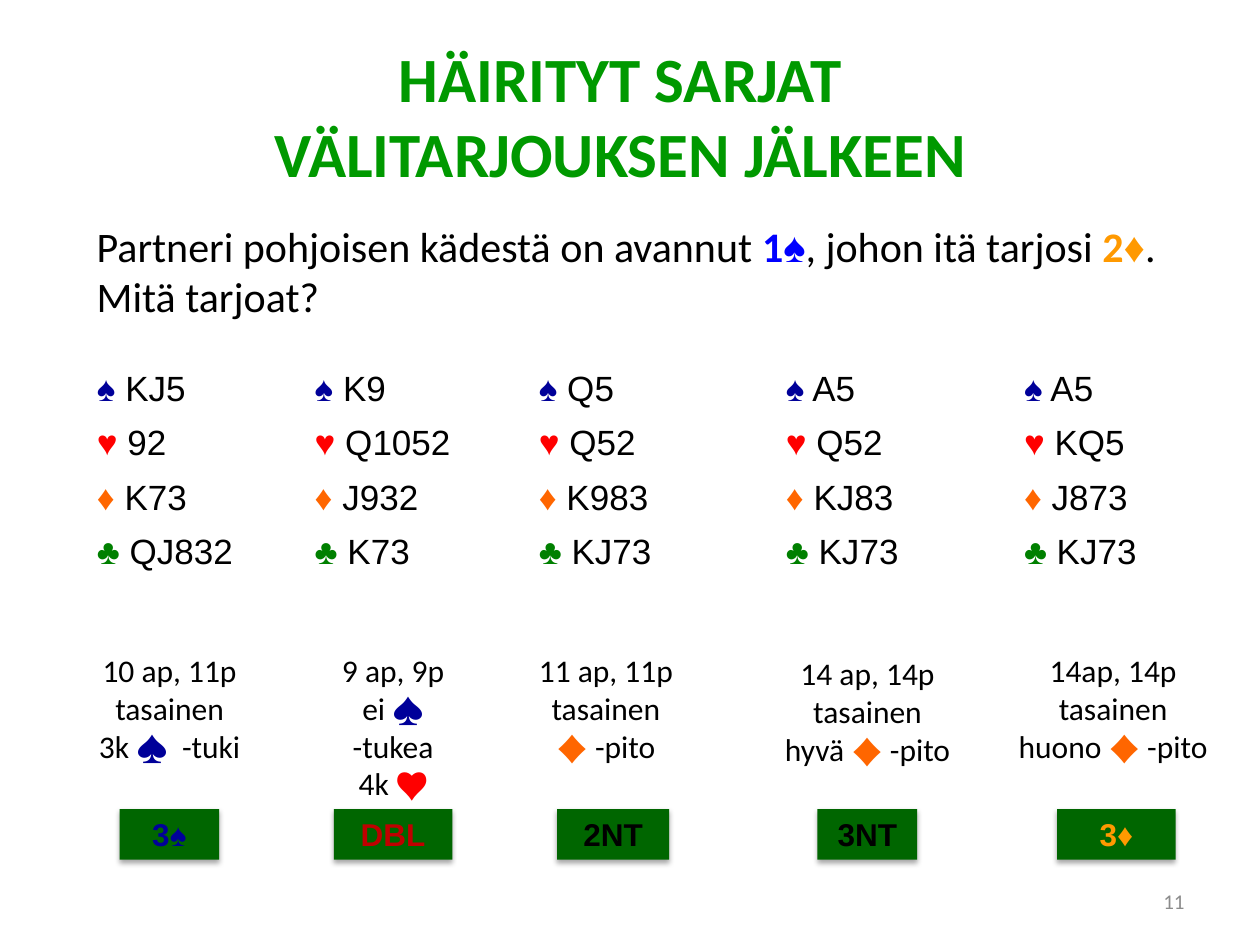
from itertools import groupby
from lxml.etree import SubElement
from pptx import Presentation
from pptx.dml.color import RGBColor as Rgb
from pptx.enum.shapes import MSO_SHAPE as Shape
from pptx.enum.text import MSO_ANCHOR as Anchor, PP_ALIGN as Align
from pptx.oxml.ns import qn
from pptx.util import Cm, Pt

INK = {"title": "009900", "text": "000000", "bid": "0000FF", "over": "FF9900",
       "double": "C00000", "chip": "006600", "page": "8C8C8C",
       "♠": "000099", "♥": "FF0000", "♦": "FF6600", "♣": "008000"}
SUITS = "♠♥♦♣"
COLS = (4.39, 4.52, 4.98, 4.8, 3.99)
HANDS = (("KJ5", "92", "K73", "QJ832"), ("K9", "Q1052", "J932", "K73"),
         ("Q5", "Q52", "K983", "KJ73"), ("A5", "Q52", "KJ83", "KJ73"),
         ("A5", "KQ5", "J873", "KJ73"))
NOTES = (((1.73, 13, 3.38, 2.57), ("10 ap, 11p", "tasainen", "3k ♠  -tuki")),
         ((6.12, 13, 3.61, 3.3), ("9 ap, 9p", "ei ♠", "-tukea", "4k ♥")),
         ((10.13, 13, 4.17, 2.57), ("11 ap, 11p", "tasainen", "♦ -pito")),
         ((15.32, 13.06, 4.34, 2.57), ("14 ap, 14p", "tasainen", "hyvä ♦ -pito")),
         ((20.19, 13, 4.5, 2.57), ("14ap, 14p", "tasainen", "huono ♦ -pito")))
BIDS = ((2.41, 2.01, "3♠", "♠"), (6.73, 2.39, "DBL", "double"),
        (11.23, 2.26, "2NT", "text"), (16.48, 2.01, "3NT", "text"),
        (21.31, 2.39, "3♦", "over"))


def add_run(para, text, size, ink="text", face="Calibri", bold=False):
    """Append one formatted run to a paragraph."""
    run = para.add_run()
    run.text = text
    font = run.font
    font.size, font.name, font.bold = Pt(size), face, bold
    font.color.rgb = Rgb.from_string(INK[ink])


def add_suits(para, text, size, face):
    """Append text, giving each suit symbol its own colour."""
    for key, part in groupby(text, lambda c: c if c in SUITS else "text"):
        add_run(para, "".join(part), size, key, face)


def add_box(slide, box):
    """Add a wrapping text box and return its text frame."""
    frame = slide.shapes.add_textbox(*map(Cm, box)).text_frame
    frame.word_wrap = True
    return frame


def add_title(slide, box):
    """Move and fill the title placeholder."""
    title = slide.shapes.title
    title.left, title.top, title.width, title.height = map(Cm, box)
    frame = title.text_frame
    frame.vertical_anchor = Anchor.TOP
    para = frame.paragraphs[0]
    para.alignment = Align.CENTER
    add_run(para, "HÄIRITYT SARJAT", 36, "title", bold=True)
    para.add_line_break()
    add_run(para, "VÄLITARJOUKSEN JÄLKEEN", 36, "title", bold=True)


def add_intro(slide, box):
    """Add the question about the bidding."""
    para = add_box(slide, box).paragraphs[0]
    add_run(para, "Partneri pohjoisen kädestä on avannut ", 24)
    add_run(para, "1", 24, "bid", bold=True)
    add_run(para, "♠", 24, "bid", "Arial")
    add_run(para, ", johon itä tarjosi ", 24)
    add_run(para, "2", 24, "over", bold=True)
    add_run(para, "♦", 24, "over", "Arial")
    add_run(para, ". Mitä tarjoat?", 24)


def add_hands(slide, box):
    """Add the table with one hand per column and one suit per row."""
    table = slide.shapes.add_table(len(SUITS), len(HANDS), *map(Cm, box)).table
    table.first_row = table.horz_banding = False
    for col, width in zip(table.columns, COLS):
        col.width = Cm(width)
    for x, hand in enumerate(HANDS):
        for y, (suit, cards) in enumerate(zip(SUITS, hand)):
            cell = table.cell(y, x)
            cell.fill.background()
            para = cell.text_frame.paragraphs[0]
            para.alignment = Align.JUSTIFY
            add_suits(para, f"{suit} {cards}", 20, "Arial")


def add_note(slide, box, lines):
    """Add the centred remarks under a hand."""
    frame = add_box(slide, box)
    for i, line in enumerate(lines):
        para = frame.add_paragraph() if i else frame.paragraphs[0]
        para.alignment = Align.CENTER
        add_suits(para, line, 18, "Calibri")


def add_chip(slide, box, text, ink):
    """Add a green answer box with a soft shadow."""
    chip = slide.shapes.add_shape(Shape.RECTANGLE, *map(Cm, box))
    chip.fill.solid()
    chip.fill.fore_color.rgb = Rgb.from_string(INK["chip"])
    chip.line.fill.background()
    chip.shadow.inherit = False
    glow = SubElement(chip.element.spPr.find(qn("a:effectLst")), qn("a:outerShdw"),
                      blurRad=str(Pt(3.1)), dist=str(Pt(1.8)), dir="5400000",
                      rotWithShape="0")
    tint = SubElement(glow, qn("a:srgbClr"), val=INK["text"])
    SubElement(tint, qn("a:alpha"), val="35000")
    para = chip.text_frame.paragraphs[0]
    para.alignment = Align.CENTER
    add_run(para, text, 18, ink, "Arial", True)


def add_page(slide, box):
    """Add the page number."""
    frame = add_box(slide, box)
    frame.vertical_anchor = Anchor.MIDDLE
    para = frame.paragraphs[0]
    para.alignment = Align.RIGHT
    add_run(para, "11", 12, "page")


def main():
    """Build and save the slide."""
    deck = Presentation()
    deck.slide_width, deck.slide_height = Cm(25.4), Cm(19.05)
    slide = deck.slides.add_slide(deck.slide_layouts[5])
    add_title(slide, (4.11, 0.66, 16.79, 3.33))
    add_hands(slide, (1.7, 7.32, sum(COLS), 4.4))
    for box, lines in NOTES:
        add_note(slide, box, lines)
    add_intro(slide, (1.7, 4.32, 22.4, 2.31))
    for left, width, text, ink in BIDS:
        add_chip(slide, (left, 16.31, width, 1.02), text, ink)
    add_page(slide, (18.21, 17.65, 5.92, 1.02))
    deck.save("out.pptx")


if __name__ == "__main__":
    main()
